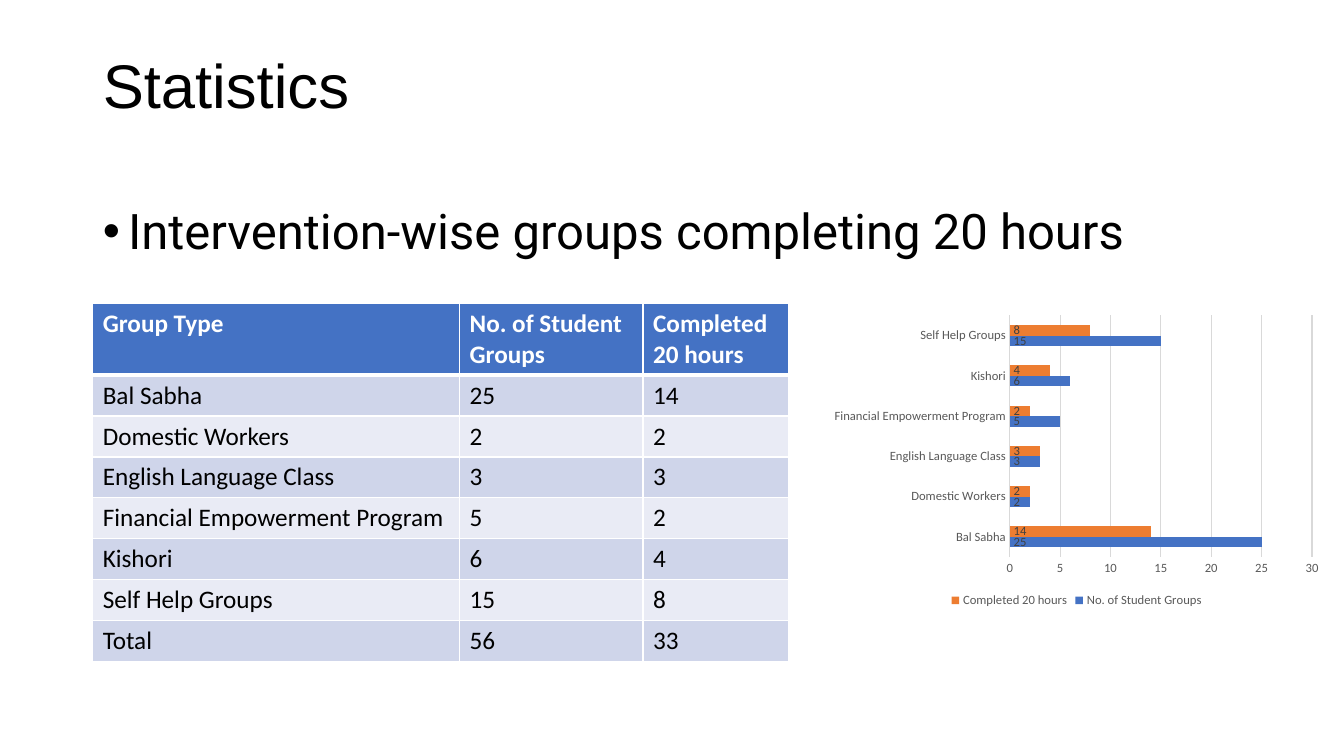
from lxml import etree
from pptx import Presentation
from pptx.chart.data import CategoryChartData
from pptx.dml.color import RGBColor
from pptx.enum.chart import XL_CHART_TYPE, XL_LABEL_POSITION, XL_LEGEND_POSITION, XL_TICK_MARK
from pptx.enum.text import MSO_ANCHOR, MSO_AUTO_SIZE, PP_ALIGN
from pptx.oxml.ns import qn
from pptx.util import Inches, Pt

BAR = XL_CHART_TYPE.BAR_CLUSTERED
INSIDE_BASE = XL_LABEL_POSITION.INSIDE_BASE
BOTTOM = XL_LEGEND_POSITION.BOTTOM
NO_TICK = XL_TICK_MARK.NONE
TOP, MIDDLE = MSO_ANCHOR.TOP, MSO_ANCHOR.MIDDLE
NO_FIT = MSO_AUTO_SIZE.NONE
LEFT = PP_ALIGN.LEFT

prs = Presentation()
prs.slide_width, prs.slide_height = Inches(13.33), Inches(7.5)
X, Y = prs.slide_width / 100, prs.slide_height / 100
MARGIN = 6.9


def box(x, y, w, h):
    return int(x * X), int(y * Y), int(w * X), int(h * Y)


def style(font, size, color, name="Calibri", bold=False):
    font.size, font.name, font.bold = Pt(size), name, bold
    font.color.rgb = RGBColor.from_string(color)


s = prs.slides.add_slide(prs.slide_layouts[1])
title, body = s.placeholders

for sp, area, text, size, name, anchor in (
    (title, (MARGIN, 4.13, 71.63, 15.07), "Statistics", 44, "Arial", MIDDLE),
    (body, (MARGIN, 26.67, 86.25, 63.47),
     "Intervention-wise groups completing 20 hours", 35, "Roboto", TOP),
):
    sp.left, sp.top, sp.width, sp.height = box(*area)
    tf = sp.text_frame
    tf.auto_size, tf.vertical_anchor, tf.word_wrap = NO_FIT, anchor, True
    p = tf.paragraphs[0]
    p.alignment, p.line_spacing, p.space_before = LEFT, 0.9, Pt(0)
    r = p.add_run()
    r.text = text
    style(r.font, size, "000000", name)

pPr = body.text_frame.paragraphs[0]._p.get_or_add_pPr()
pPr.set("marL", str(Inches(0.25)))
pPr.set("indent", str(-Inches(0.25)))
etree.SubElement(pPr, qn("a:buFont")).set("typeface", "Arial")
etree.SubElement(pPr, qn("a:buChar")).set("char", "•")

header = ("Group Type", "No. of Student Groups", "Completed 20 hours")
groups = [
    ("Bal Sabha", 25, 14),
    ("Domestic Workers", 2, 2),
    ("English Language Class", 3, 3),
    ("Financial Empowerment Program", 5, 2),
    ("Kishori", 6, 4),
    ("Self Help Groups", 15, 8),
]
total = ("Total", sum(g[1] for g in groups), sum(g[2] for g in groups))
rows = [header, *groups, total]
col_widths = (27.3, 13.65, 10.8)
row_heights = [9.4] + [5.42] * (len(rows) - 1)

table = s.shapes.add_table(
    len(rows), len(header), *box(MARGIN, 40.13, sum(col_widths), sum(row_heights))
).table
for column, width in zip(table.columns, col_widths):
    column.width = int(width * X)
for i, values in enumerate(rows):
    table.rows[i].height = int(row_heights[i] * Y)
    fill = "4472C4" if i == 0 else ("E9EBF5", "CFD5EA")[i % 2]
    for j, value in enumerate(values):
        cell = table.cell(i, j)
        tcPr = cell._tc.get_or_add_tcPr()
        for side in ("lnL", "lnR", "lnT", "lnB"):
            thick = (i == 0 and side == "lnB") or (i == 1 and side == "lnT")
            ln = etree.SubElement(tcPr, qn("a:" + side), w=str(Pt(3 if thick else 1)))
            solid = etree.SubElement(ln, qn("a:solidFill"))
            etree.SubElement(solid, qn("a:srgbClr"), val="FFFFFF")
        cell.fill.solid()
        cell.fill.fore_color.rgb = RGBColor.from_string(fill)
        r = cell.text_frame.paragraphs[0].add_run()
        r.text = str(value)
        style(r.font, 18, "000000" if i else "FFFFFF", bold=i == 0)

data = CategoryChartData()
data.categories = [g[0] for g in groups]
for j in (1, 2):
    data.add_series(header[j], [g[j] for g in groups])
chart = s.shapes.add_chart(BAR, *box(61.35, 40.93, 37.5, 40), data).chart
style(chart.font, 10, "000000")
chart.has_title = False
chart.has_legend = True
chart.legend.position = BOTTOM
chart.legend.include_in_layout = False
style(chart.legend.font, 9, "595959")

plot = chart.plots[0]
plot.gap_width, plot.overlap, plot.vary_by_categories = 182, 0, False
for series, color in zip(plot.series, ("4472C4", "ED7D31")):
    series.format.fill.solid()
    series.format.fill.fore_color.rgb = RGBColor.from_string(color)
    labels = series.data_labels
    labels.show_value, labels.position = True, INSIDE_BASE
    style(labels.font, 9, "404040")

cat, val = chart.category_axis, chart.value_axis
for axis in (cat, val):
    axis.major_tick_mark = axis.minor_tick_mark = NO_TICK
    style(axis.tick_labels.font, 9, "595959")
val.minimum_scale, val.maximum_scale, val.major_unit = 0, 30, 5
val.has_major_gridlines = True
val.format.line.fill.background()
for line in (cat.format.line, val.major_gridlines.format.line):
    line.width = Pt(0.75)
    line.color.rgb = RGBColor.from_string("D9D9D9")

prs.save("out.pptx")
